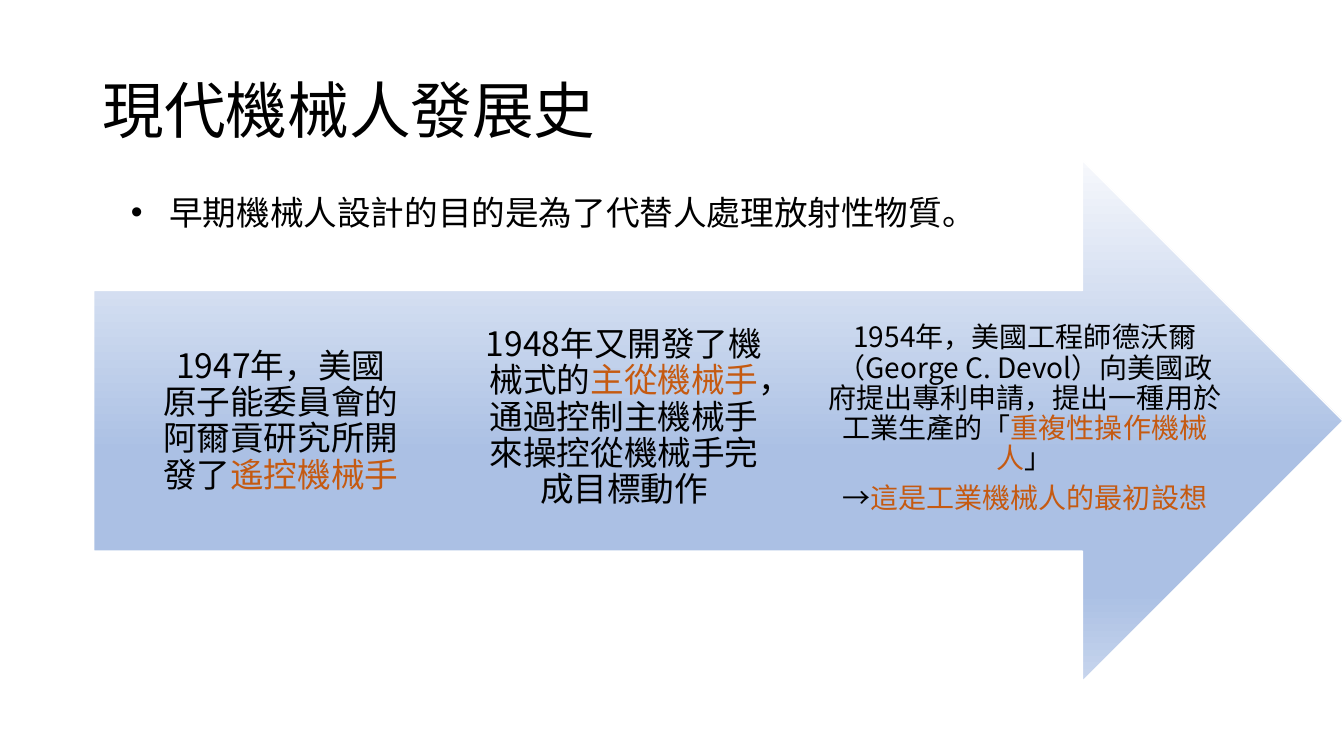
import pptx
import pptx.util
import pptx.oxml
import pptx.oxml.ns
import pptx.dml.color
import pptx.enum.shapes
import pptx.enum.text
from lxml import etree

Inches = pptx.util.Inches
Pt = pptx.util.Pt
qn = pptx.oxml.ns.qn
ALIGN = pptx.enum.text.PP_ALIGN
ANCHOR = pptx.enum.text.MSO_ANCHOR

FONT = "Noto Sans CJK TC"
COLORS = {
    "text": "000000",
    "accent": "C55A11",
    "outline": "FFFFFF",
    "arrow_top": "F6F8FC",
    "arrow_middle": "ABC0E4",
    "arrow_bottom": "C7D5ED",
}

deck = pptx.Presentation()
deck.slide_width = Inches(13.33)
deck.slide_height = Inches(7.5)
page = deck.slides.add_slide(deck.slide_layouts[6])


def add_text_box(left, top, width, height, anchor):
    box = page.shapes.add_textbox(Inches(left), Inches(top), Inches(width), Inches(height))
    box.text_frame.word_wrap = True
    box.text_frame.vertical_anchor = anchor
    return box.text_frame


def add_span(para, text, size, color="text"):
    span = para.add_run()
    span.text = text
    span.font.size = Pt(size)
    span.font.color.rgb = pptx.dml.color.RGBColor.from_string(COLORS[color])
    span.font.name = FONT
    etree.SubElement(span.font._element, qn("a:ea"), typeface=FONT)


# Title
title = add_text_box(0.92, 0.4, 11.5, 1.45, ANCHOR.MIDDLE)
title.paragraphs[0].line_spacing = 0.9
add_span(title.paragraphs[0], "現代機械人發展史", 44)

# Timeline arrow with a vertical gradient
arrow = page.shapes.add_shape(
    pptx.enum.shapes.MSO_SHAPE.RIGHT_ARROW,
    Inches(0.93), Inches(1.59), Inches(12.39), Inches(5.17))
arrow.shadow.inherit = False
arrow.line.color.rgb = pptx.dml.color.RGBColor.from_string(COLORS["outline"])
arrow.line.width = Pt(1)
arrow.fill.gradient()
arrow.fill.gradient_angle = 270
stop_list = arrow._element.spPr.find(qn("a:gradFill")).find(qn("a:gsLst"))
for stop in list(stop_list):
    stop_list.remove(stop)
for percent, color in [(0, "arrow_top"), (56, "arrow_middle"),
                       (83, "arrow_middle"), (100, "arrow_bottom")]:
    stop = etree.SubElement(stop_list, qn("a:gs"), pos=str(percent * 1000))
    etree.SubElement(stop, qn("a:srgbClr"), val=COLORS[color])

# Milestones: place, vertical inset, text size, paragraphs of (text, color)
milestones = [
    ((1.6, 2.48, 2.37, 3.41), 0.27, 24, [
        [("1947年，美國原子能委員會的阿爾貢研究所開發了", "text"),
         ("遙控機械手", "accent")],
    ]),
    ((4.74, 2.7, 2.9, 2.9), 0.27, 24, [
        [("1948年又開發了機械式的", "text"),
         ("主從機械手", "accent"),
         ("，通過控制主機械手來操控從機械手完成目標動作", "text")],
    ]),
    ((8.18, 2.37, 3.97, 3.58), 0.22, 20, [
        [("1954年，美國工程師德沃爾（George C. Devol）向美國政府提出專利申請，"
          "提出一種用於工業生產的「", "text"),
         ("重複性操作機械人", "accent"),
         ("」", "text")],
        [("→", "text"), ("這是工業機械人的最初設想", "accent")],
    ]),
]
for place, inset, size, paragraphs in milestones:
    frame = add_text_box(*place, ANCHOR.MIDDLE)
    frame.margin_left = frame.margin_right = 0
    frame.margin_top = frame.margin_bottom = Inches(inset)
    for index, spans in enumerate(paragraphs):
        para = frame.add_paragraph() if index else frame.paragraphs[0]
        para.alignment = ALIGN.CENTER
        para.line_spacing = 0.9
        para.space_after = Pt(size * 0.35)
        for text, color in spans:
            add_span(para, text, size, color)

# Bulleted purpose statement
purpose = add_text_box(1.2, 1.85, 10.43, 0.81, ANCHOR.TOP)
purpose.auto_size = pptx.enum.text.MSO_AUTO_SIZE.SHAPE_TO_FIT_TEXT
para = purpose.paragraphs[0]
properties = para._p.get_or_add_pPr()
properties.set("marL", str(Inches(0.38)))
properties.set("indent", str(-Inches(0.38)))
etree.SubElement(properties, qn("a:buFont"), typeface="Arial")
etree.SubElement(properties, qn("a:buChar"), char="•")
add_span(para, "早期機械人設計的目的是為了代替人處理放射性物質。", 24)

deck.save("out.pptx")
